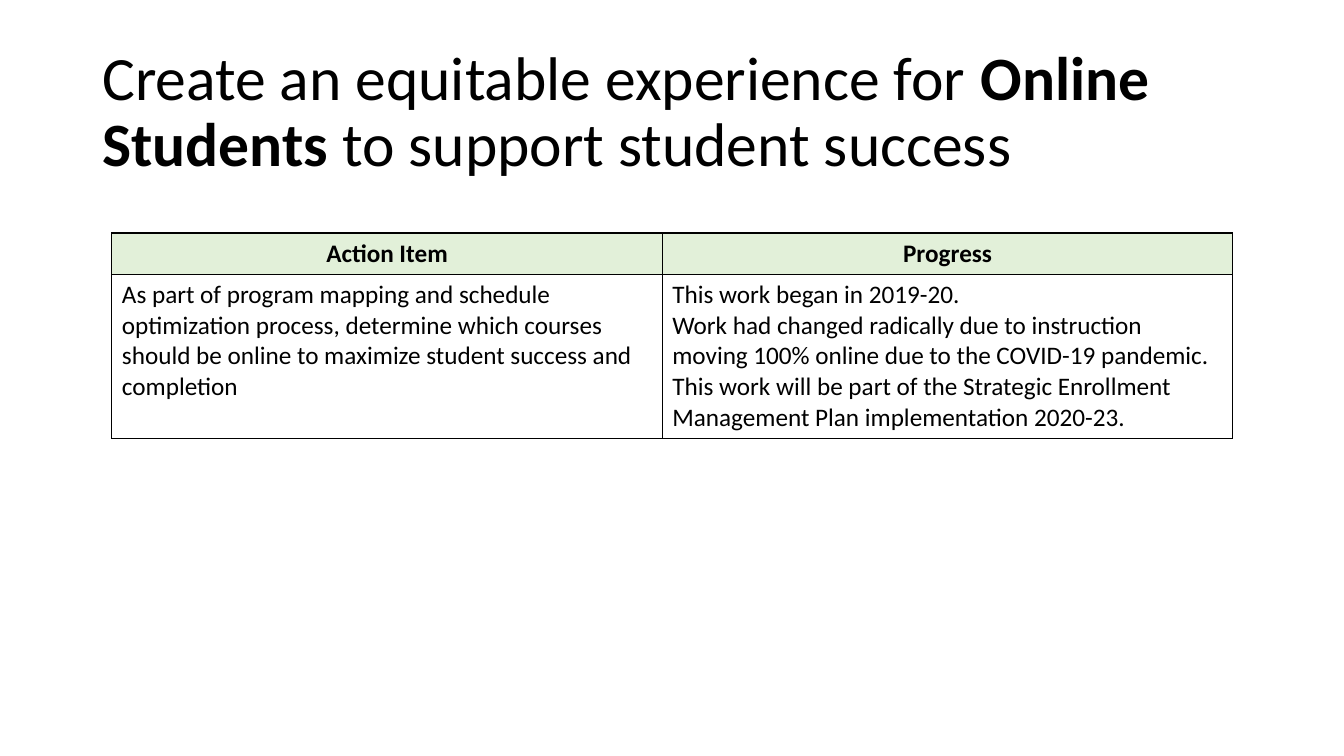
from dataclasses import dataclass

from lxml.etree import SubElement as Sub
from pptx import Presentation
from pptx.dml.color import RGBColor as Rgb
from pptx.enum.text import MSO_ANCHOR as Anchor, PP_ALIGN as Align
from pptx.oxml.ns import qn
from pptx.util import Cm, Pt

HUES = {"ink": "000000", "head": "E2F0D9"}
FONT = "Calibri"


@dataclass
class Run:
    text: str
    bold: bool = False


@dataclass
class Item:
    paras: list[list[Run]]
    fill: str | None = None
    align: Align = Align.LEFT


TITLE = [
    Run("Create an equitable experience for "),
    Run("Online Students ", True),
    Run("to support student success"),
]
ROWS = [
    [Item([[Run(name, True)]], "head", Align.CENTER) for name in ("Action Item", "Progress")],
    [
        Item([[Run("As part of program mapping and schedule optimization process, "
                   "determine which courses should be online to maximize student "
                   "success and completion")]]),
        Item([
            [Run("This work began in 2019-20.")],
            [Run("Work had changed radically due to instruction moving 100% online "
                 "due to the COVID-19 pandemic.")],
            [Run("This work will be part of the Strategic Enrollment Management Plan "
                 "implementation 2020-23.")],
        ]),
    ],
]
WIDTHS = (13.87, 14.38)
HEIGHTS = (1.04, 4.14)


def write(frame, paras: list[list[Run]], size: int, align: Align, space: float = 1.0) -> None:
    for n, runs in enumerate(paras):
        para = frame.add_paragraph() if n else frame.paragraphs[0]
        para.alignment = align
        para.line_spacing = space
        for run in runs:
            part = para.add_run()
            part.text = run.text
            font = part.font
            font.name, font.size, font.bold = FONT, Pt(size), run.bold
            font.color.rgb = Rgb.from_string(HUES["ink"])


def edge(cell) -> None:
    props = cell._tc.get_or_add_tcPr()
    for n, side in enumerate(("lnL", "lnR", "lnT", "lnB")):
        line = props.makeelement(qn(f"a:{side}"), {"w": str(Pt(1))})
        fill = Sub(line, qn("a:solidFill"))
        Sub(fill, qn("a:srgbClr"), val=HUES["ink"])
        props.insert(n, line)


def draw_cell(cell, item: Item) -> None:
    if item.fill:
        cell.fill.solid()
        cell.fill.fore_color.rgb = Rgb.from_string(HUES[item.fill])
    else:
        cell.fill.background()
    edge(cell)
    write(cell.text_frame, item.paras, 18, item.align)


def draw_title(slide) -> None:
    box = slide.shapes.add_textbox(Cm(2.33), Cm(1.02), Cm(29.21), Cm(3.68))
    frame = box.text_frame
    frame.word_wrap = True
    frame.vertical_anchor = Anchor.MIDDLE
    write(frame, [TITLE], 44, Align.LEFT, 0.9)


def draw_table(slide) -> None:
    table = slide.shapes.add_table(
        len(HEIGHTS), len(WIDTHS), Cm(2.82), Cm(5.87), Cm(sum(WIDTHS)), Cm(sum(HEIGHTS))
    ).table
    table.horz_banding = False
    for col, width in zip(table.columns, WIDTHS):
        col.width = Cm(width)
    for row, height, items in zip(table.rows, HEIGHTS, ROWS):
        row.height = Cm(height)
        for cell, item in zip(row.cells, items):
            draw_cell(cell, item)


def main() -> None:
    deck = Presentation()
    deck.slide_width, deck.slide_height = Cm(33.87), Cm(19.05)
    slide = deck.slides.add_slide(deck.slide_layouts[6])
    draw_title(slide)
    draw_table(slide)
    deck.save("out.pptx")


if __name__ == "__main__":
    main()
